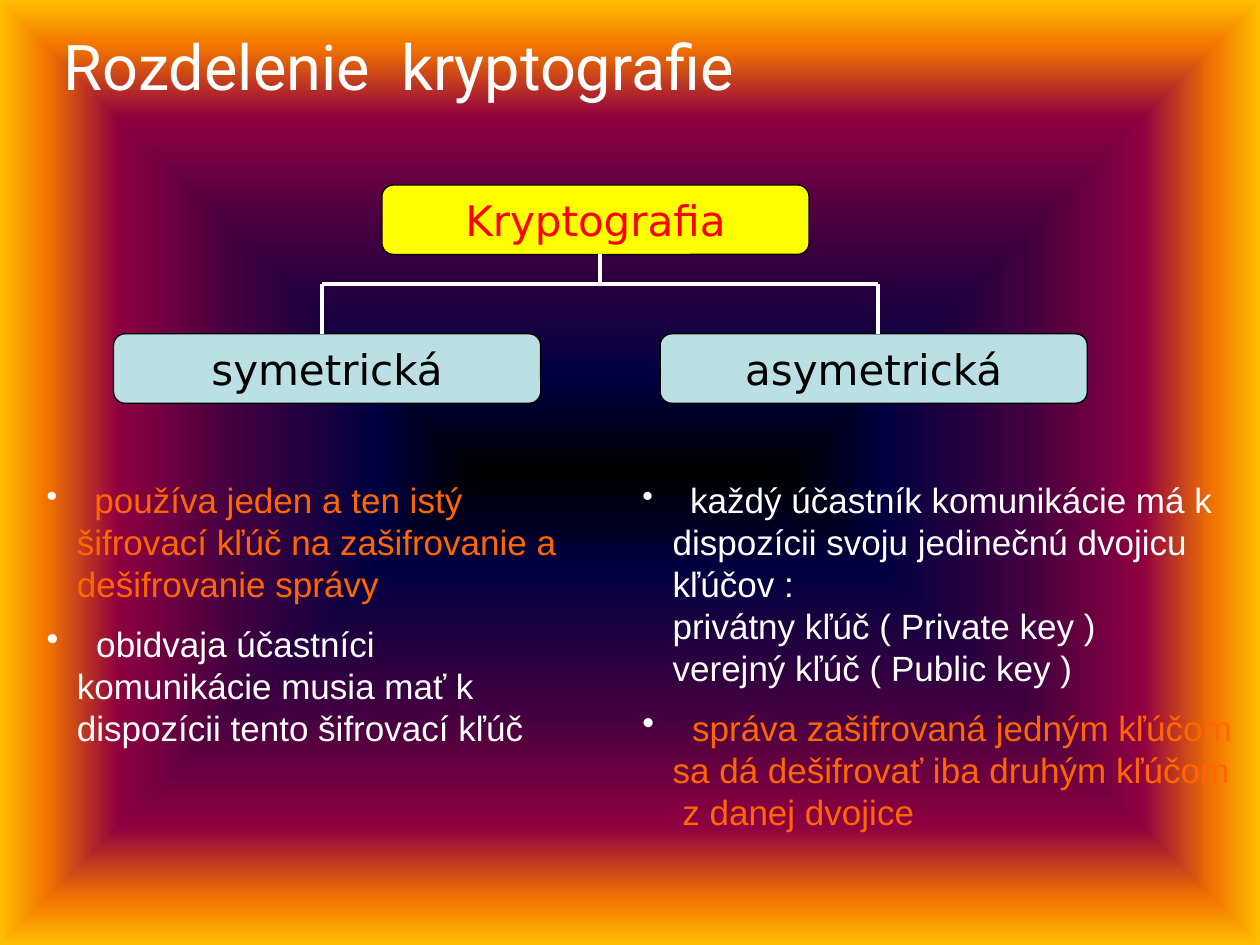
"""Build a slide on the division of cryptography."""
from lxml import etree
from pptx import Presentation, util as u
from pptx.dml.color import RGBColor
from pptx.enum import shapes, text
from pptx.oxml import parse_xml
from pptx.oxml.ns import nsdecls, qn


def rgb(value):
    return RGBColor.from_string(value)


def add_run(p, words, font, size, color):
    r = p.add_run()
    r.text = words
    for key, value in {"name": font, "size": u.Pt(size)}.items():
        setattr(r.font, key, value)
    r.font.color.rgb = rgb(color)


WHITE, ORANGE = "FFFFFF", "FF6600"

prs = Presentation()
prs.slide_width, prs.slide_height = u.Cm(25.4), u.Cm(19.05)
s = prs.slides.add_slide(prs.slide_layouts[6])

stops = [(0, "000000"), (20, "000040"), (50, "400040"),
         (75, "8F0040"), (90, "F27300"), (100, "FFBF00")]
gs = "".join(f'<a:gs pos="{pos * 1000}"><a:srgbClr val="{c}"/></a:gs>' for pos, c in stops)
s.background.fill.gradient()
grad = s.background._cSld.bg.bgPr.find(qn("a:gradFill"))
grad.getparent().replace(grad, parse_xml(
    f'<a:gradFill {nsdecls("a")} rotWithShape="1"><a:gsLst>{gs}</a:gsLst><a:path path="shape">'
    '<a:fillToRect l="50000" t="50000" r="50000" b="50000"/></a:path></a:gradFill>'))

title = s.shapes.add_textbox(u.Cm(1.04), u.Cm(0.13), u.Cm(22.86), u.Cm(2.36))
tf = title.text_frame
for key, value in {"word_wrap": True, "vertical_anchor": text.MSO_ANCHOR.MIDDLE}.items():
    setattr(tf, key, value)
add_run(tf.paragraphs[0], "Rozdelenie  kryptografie", "Roboto", 36, WHITE)

boxes = [("Kryptografia", 7.7, 3.73, "FFFF00", "FF0000"),
         ("symetrická", 2.29, 6.73, "BBE0E3", "000000"),
         ("asymetrická", 13.31, 6.73, "BBE0E3", "000000")]
for words, x, y, fill, color in boxes:
    sp = s.shapes.add_shape(shapes.MSO_SHAPE.ROUNDED_RECTANGLE,
                            u.Cm(x), u.Cm(y), u.Cm(8.61), u.Cm(1.4))
    sp.shadow.inherit = False
    sp.fill.solid()
    sp.fill.fore_color.rgb = rgb(fill)
    sp.line.color.rgb = rgb("000000")
    sp.line.width = u.Pt(0.75)
    tf = sp.text_frame
    for key, value in {"word_wrap": False, "vertical_anchor": text.MSO_ANCHOR.MIDDLE}.items():
        setattr(tf, key, value)
    p = tf.paragraphs[0]
    p.alignment = text.PP_ALIGN.CENTER
    add_run(p, words, "DejaVu Sans", 24, color)

left, mid, right = 6.5, 12.1, 17.7
top, bar, bottom = 5.13, 5.72, 6.73
for ends in [(left, bar, right, bar), (mid, top, mid, bar),
             (left, bar, left, bottom), (right, bar, right, bottom)]:
    sp = s.shapes.add_connector(shapes.MSO_CONNECTOR.STRAIGHT, *map(u.Cm, ends))
    sp.line.color.rgb = rgb(WHITE)
    sp.line.width = u.Pt(2.25)
    etree.SubElement(sp._element.spPr, qn("a:effectLst"))

columns = [
    (0.69, 11, 5.82, [
        (18, "používa jeden a ten istý šifrovací kľúč na zašifrovanie a dešifrovanie správy", ORANGE),
        (20, "obidvaja účastníci komunikácie musia mať k dispozícii tento šifrovací kľúč", WHITE)]),
    (12.7, 12.4, 7.52, [
        (18, "každý účastník komunikácie má k dispozícii svoju jedinečnú dvojicu kľúčov :\v"
             "privátny kľúč ( Private key )\vverejný kľúč ( Public key )", WHITE),
        (20, "správa zašifrovaná jedným kľúčom sa dá dešifrovať iba druhým kľúčom  z danej dvojice",
         ORANGE)]),
]
for x, width, height, items in columns:
    tf = s.shapes.add_textbox(u.Cm(x), u.Cm(9.53), u.Cm(width), u.Cm(height)).text_frame
    tf.word_wrap = True
    for i, (lead, words, color) in enumerate(items):
        p = tf.add_paragraph() if i else tf.paragraphs[0]
        p.space_after = u.Pt(10)
        pPr = p._p.get_or_add_pPr()
        pPr.set("marL", str(u.Cm(0.61)))
        pPr.set("indent", str(-u.Cm(0.61)))
        etree.SubElement(pPr, qn("a:buChar"), char="•")
        add_run(p, "  ", "Arial", lead, WHITE)
        for j, line in enumerate(words.split("\v")):
            if j:
                p.add_line_break()
            add_run(p, line, "Arial", 20, color)

prs.save("out.pptx")
